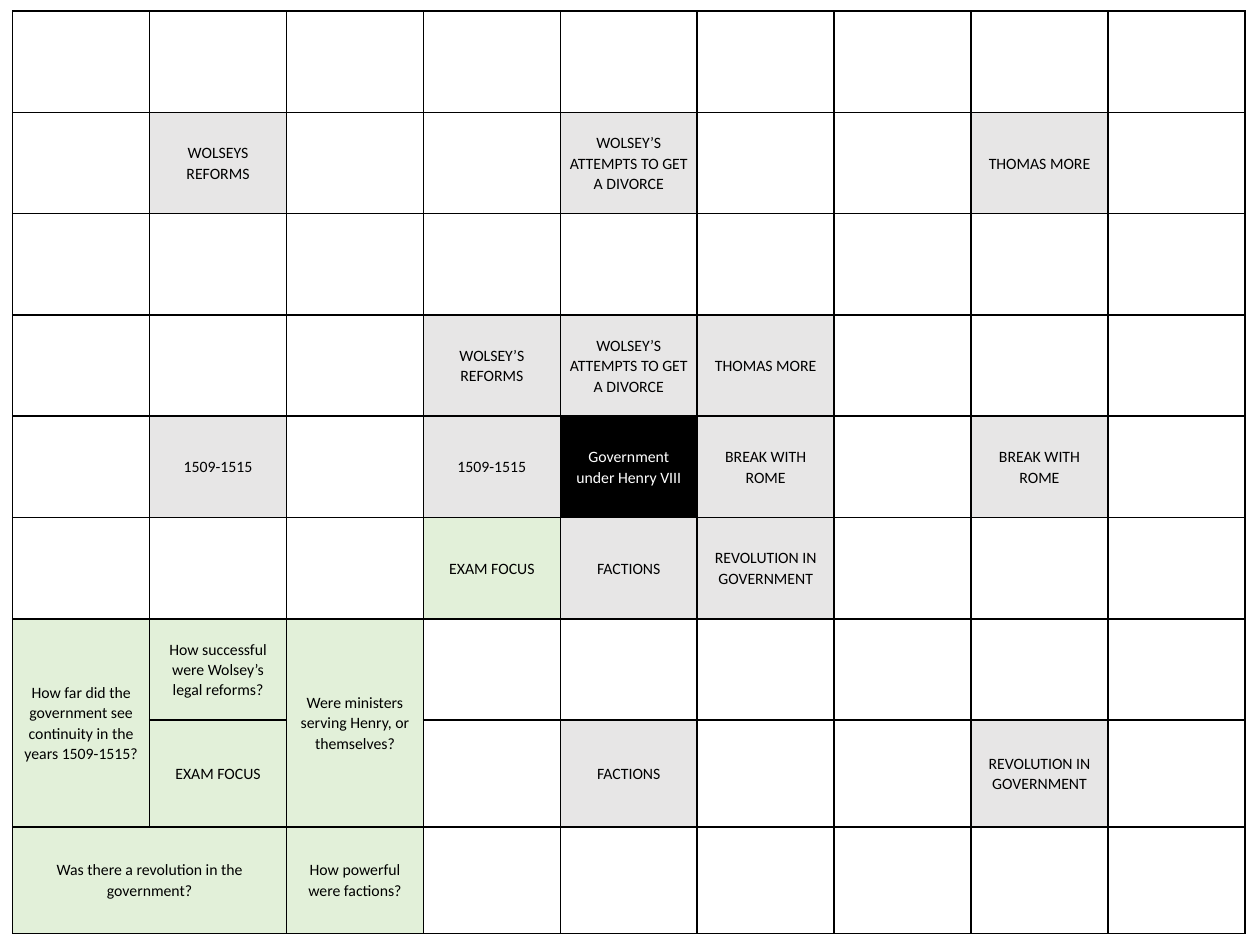
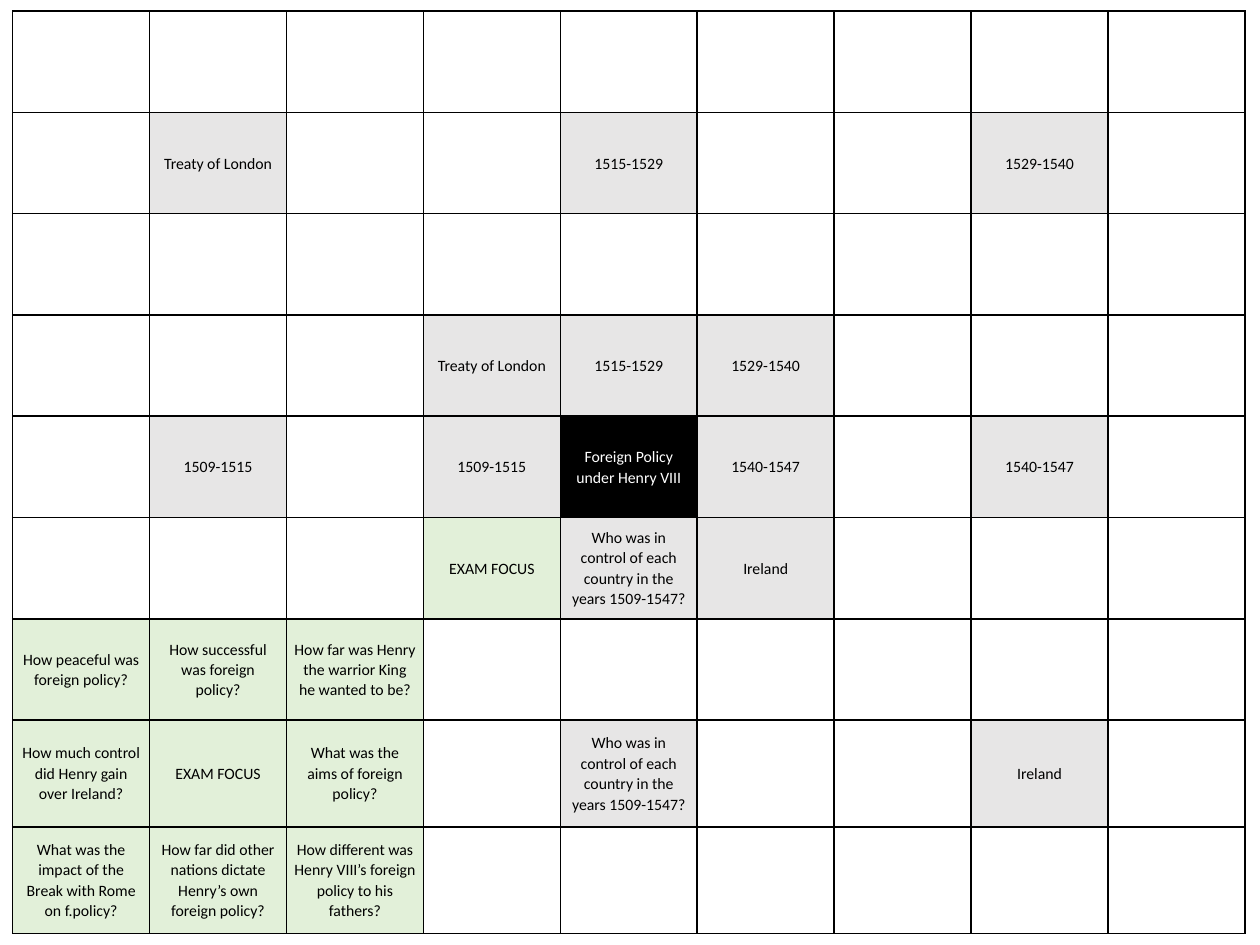
from lxml import etree
from pptx import Presentation
from pptx.dml.color import RGBColor
from pptx.enum.text import MSO_ANCHOR, PP_ALIGN
from pptx.oxml.ns import qn
from pptx.util import Pt

CENTER = PP_ALIGN.CENTER
MIDDLE = MSO_ANCHOR.MIDDLE

BLACK, WHITE, GREY, GREEN = "000000", "FFFFFF", "E7E6E6", "E2F0D9"
FONT = "Calibri"
FONT_SIZE = 9
BORDER_WIDTH = 1

# Grid of nine by nine cells; the last two rows are a little taller
SIZE = 9
HUB = 4
LEFT, TOP = 7.2, 6.3
COLUMN_WIDTH = 78.25
ROW_HEIGHTS = [57.9] * 7 + [61] * 2
EXAM = "EXAM FOCUS"

# Topics stand around the hub, keyed by (row step, column step).
# Each is repeated three steps out, in the middle of its own block.
# Questions fill the block around the outer exam cell, keyed by (row, column).
BOARDS = [
    {
        "hub": "Government under Henry VIII",
        "topics": {
            (-1, -1): "WOLSEY’S REFORMS",
            (-1, 0): "WOLSEY’S ATTEMPTS TO GET A DIVORCE",
            (-1, 1): "THOMAS MORE",
            (0, -1): "1509-1515",
            (0, 1): "BREAK WITH ROME",
            (1, -1): EXAM,
            (1, 0): "FACTIONS",
            (1, 1): "REVOLUTION IN GOVERNMENT",
        },
        "outer_wording": {(1, 1): "WOLSEYS REFORMS"},
        "questions": {
            (6, 0): "How far did the government see continuity in the years 1509-1515?",
            (6, 1): "How successful were Wolsey’s legal reforms?",
            (6, 2): "Were ministers serving Henry, or themselves?",
            (8, 0): "Was there a revolution in the government?",
            (8, 2): "How powerful were factions?",
        },
        "merges": [((6, 0), (7, 0)), ((6, 2), (7, 2)), ((8, 0), (8, 1))],
    },
    {
        "hub": "Foreign Policy under Henry VIII",
        "topics": {
            (-1, -1): "Treaty of London",
            (-1, 0): "1515-1529",
            (-1, 1): "1529-1540",
            (0, -1): "1509-1515",
            (0, 1): "1540-1547",
            (1, -1): EXAM,
            (1, 0): "Who was in control of each country in the years 1509-1547?",
            (1, 1): "Ireland",
        },
        "outer_wording": {},
        "questions": {
            (6, 0): "How peaceful was foreign policy?",
            (6, 1): "How successful was foreign policy?",
            (6, 2): "How far was Henry the warrior King he wanted to be?",
            (7, 0): "How much control did Henry gain over Ireland?",
            (7, 2): "What was the aims of foreign policy?",
            (8, 0): "What was the impact of the Break with Rome on f.policy?",
            (8, 1): "How far did other nations dictate Henry’s own foreign policy?",
            (8, 2): "How different was Henry VIII’s foreign policy to his fathers?",
        },
        "merges": [],
    },
]


def paint(color_format, color):
    color_format.rgb = RGBColor.from_string(color)


def add_borders(cell):
    properties = cell._tc.get_or_add_tcPr()
    for index, side in enumerate(("a:lnL", "a:lnR", "a:lnT", "a:lnB")):
        line = etree.Element(qn(side), w=str(Pt(BORDER_WIDTH)))
        fill = etree.SubElement(line, qn("a:solidFill"))
        etree.SubElement(fill, qn("a:srgbClr"), val=BLACK)
        properties.insert(index, line)


deck = Presentation()
deck.slide_width = Pt(720)
deck.slide_height = Pt(540)

for board in BOARDS:
    page = deck.slides.add_slide(deck.slide_layouts[6])

    # Work out the text of every filled cell
    texts = {(HUB, HUB): board["hub"]}
    for (down, across), topic in board["topics"].items():
        for steps in (1, 3):
            texts[HUB + steps * down, HUB + steps * across] = topic
    texts.update(board["outer_wording"])
    texts.update(board["questions"])

    # Table frame
    table = page.shapes.add_table(
        SIZE, SIZE, Pt(LEFT), Pt(TOP), Pt(SIZE * COLUMN_WIDTH), Pt(sum(ROW_HEIGHTS))
    ).table
    table.first_row = False
    table.horz_banding = False
    for column in table.columns:
        column.width = Pt(COLUMN_WIDTH)
    for row, height in zip(table.rows, ROW_HEIGHTS):
        row.height = Pt(height)
    for first, last in board["merges"]:
        table.cell(*first).merge(table.cell(*last))

    # Cells
    for row in range(SIZE):
        for column in range(SIZE):
            cell = table.cell(row, column)
            text = texts.get((row, column))
            in_exam_block = row >= 6 and column <= 2

            if (row, column) == (HUB, HUB):
                color = BLACK
            elif in_exam_block or text == EXAM:
                color = GREEN
            else:
                color = GREY if text else None
            if color:
                cell.fill.solid()
                paint(cell.fill.fore_color, color)
            else:
                cell.fill.background()
            add_borders(cell)

            cell.vertical_anchor = MIDDLE
            cell.margin_left = cell.margin_right = Pt(4.5)
            cell.margin_top = cell.margin_bottom = Pt(0)
            if text:
                para = cell.text_frame.paragraphs[0]
                para.alignment = CENTER
                para.line_spacing = 1.07
                span = para.add_run()
                span.text = text
                span.font.name = FONT
                span.font.size = Pt(FONT_SIZE)
                paint(span.font.color, WHITE if color == BLACK else BLACK)

deck.save("out.pptx")
